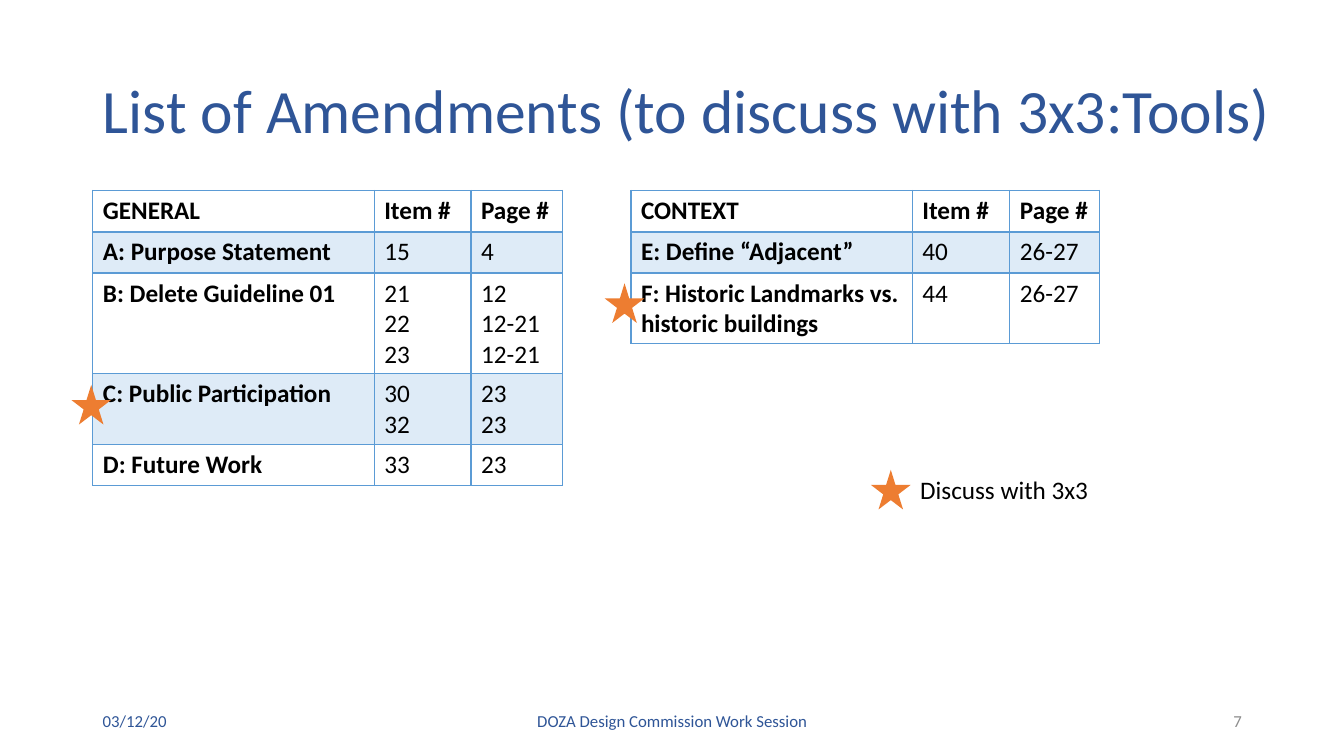
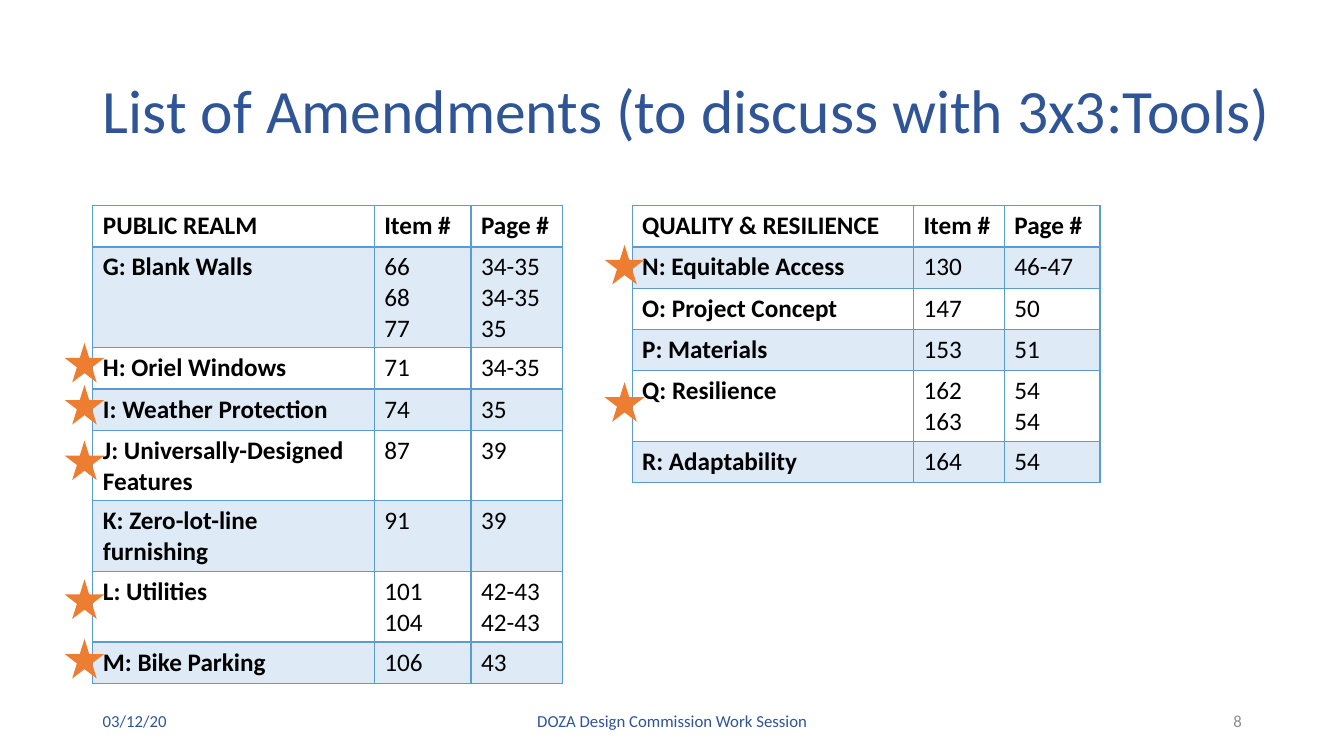
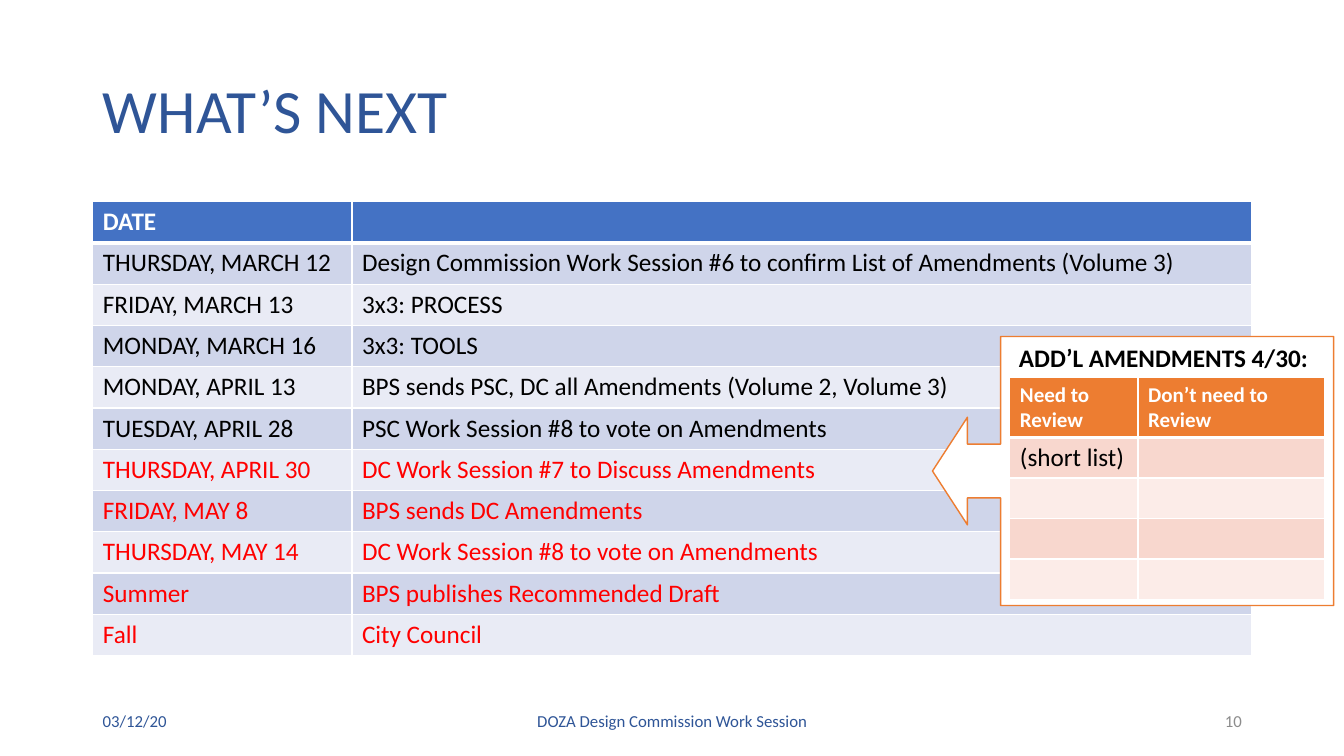
from pptx import Presentation
from pptx.dml.color import RGBColor
from pptx.enum.shapes import MSO_SHAPE
from pptx.enum.text import MSO_ANCHOR, MSO_AUTO_SIZE, PP_ALIGN
from pptx.oxml import parse_xml
from pptx.oxml.ns import nsdecls
from pptx.util import Cm, Pt

LEFT, MID, RIGHT = PP_ALIGN.LEFT, PP_ALIGN.CENTER, PP_ALIGN.RIGHT
STAR, CALL = MSO_SHAPE.STAR_5_POINT, MSO_SHAPE.LEFT_ARROW_CALLOUT
CENTER, FIXED = MSO_ANCHOR.MIDDLE, MSO_AUTO_SIZE.NONE
rgb = RGBColor.from_string

NAVY, GREY, BLACK, WHITE = "2F5597", "8C8C8C", "000000", "FFFFFF"
ORANGE, RED = "ED7D31", "FF0000"
EDGE = 2.34     # left margin
ROW = 1.04      # table row height

# Table looks: fills, line colour, header rule, first red row
PLAIN = {"head": WHITE, "ink": BLACK, "bands": ("DEEBF7", WHITE),
         "line": "5B9BD5", "rule": 2, "size": 18, "bold": True, "late": 99}
BLUE = {"head": "4472C4", "ink": WHITE, "bands": ("CFD5EA", "E9EBF5"),
        "line": WHITE, "rule": 3, "size": 18, "bold": False, "late": 6}
WARM = {**BLUE, "head": ORANGE, "bands": ("F8D7CE", "FCECE8"),
        "size": 15, "late": 99}


def write(frame, text, hue=BLACK, align=LEFT, **props):
    """Fill a text frame; each line of text becomes a paragraph."""
    frame.word_wrap = True
    frame.text = text
    for para in frame.paragraphs:
        para.alignment = align
        for run in para.runs:
            run.font.color.rgb = rgb(hue)
            for key, val in {"name": "Calibri", "size": Pt(18),
                             "bold": False, **props}.items():
                setattr(run.font, key, val)


def grid(slide, x, y, cols, rows, look, high=ROW, top=ROW):
    """Add a table with a ruled header and banded rows."""
    table = slide.shapes.add_table(
        len(rows), len(cols), Cm(x), Cm(y), Cm(sum(cols)),
        Cm(top + high * (len(rows) - 1))).table
    table.first_row = table.horz_banding = False
    for col, wide in zip(table.columns, cols):
        col.width = Cm(wide)
    for r, row in enumerate(rows):
        table.rows[r].height = Cm(high if r else top)
        for c, text in enumerate(row):
            cell = table.cell(r, c)
            for side in "LRTB":
                thick = (r, side) in ((0, "B"), (1, "T"))
                wide = Pt(look["rule"] if thick else 1)
                cell._tc.get_or_add_tcPr().append(parse_xml(
                    f'<a:ln{side} {nsdecls("a")} w="{wide}"><a:solidFill>'
                    f'<a:srgbClr val="{look["line"]}"/></a:solidFill>'
                    f'</a:ln{side}>'))
            cell.fill.solid()
            fill = look["bands"][(r - 1) % 2] if r else look["head"]
            cell.fill.fore_color.rgb = rgb(fill)
            hue = RED if r >= look["late"] else BLACK if r else look["ink"]
            write(cell.text_frame, text, hue,
                  size=Pt(18 if r else look["size"]),
                  bold=r == 0 or (look["bold"] and c == 0))


deck = Presentation()
deck.slide_width, deck.slide_height = Cm(33.87), Cm(19.05)

# Shared title place
base = deck.slide_layouts[5]
head = base.placeholders[0]
for key, val in {"left": EDGE, "top": 1.02, "width": 30.38,
                 "height": 3.68}.items():
    setattr(head, key, Cm(val))

# Shared title style and footer
LIST = "List of Amendments (to discuss with 3x3:Tools)"
slides = []
for title, page in ((LIST, "7"), (LIST, "8"), ("WHAT’S NEXT", "10")):
    slide = deck.slides.add_slide(base)
    slides.append(slide)
    frame = slide.shapes.title.text_frame
    write(frame, title, NAVY, size=Pt(44))
    frame.auto_size, frame.vertical_anchor = FIXED, CENTER
    frame.paragraphs[0].line_spacing = 0.9
    for x, wide, text, hue, align in (
            (EDGE, 7.62, "03/12/20", NAVY, LEFT),
            (11.23, 11.43, "DOZA Design Commission Work Session", NAVY, MID),
            (23.93, 7.62, page, GREY, RIGHT)):
        box = slide.shapes.add_textbox(Cm(x), Cm(17.65), Cm(wide), Cm(1.02))
        write(box.text_frame, text, hue, align, size=Pt(12))
        box.text_frame.vertical_anchor = CENTER
first, second, last = slides

# Amendment tables
COLS = (7.09, 2.44, 2.31)
NUMS = ("Item #", "Page #")
grid(first, EDGE, 4.8, COLS, (
    ("GENERAL", *NUMS),
    ("A: Purpose Statement", "15", "4"),
    ("B: Delete Guideline 01", "21\n22\n23", "12\n12-21\n12-21"),
    ("C: Public Participation", "30\n32", "23\n23"),
    ("D: Future Work", "33", "23")), PLAIN)
grid(first, 15.9, 4.8, (7.09, 2.46, 2.26), (
    ("CONTEXT", *NUMS),
    ("E: Define “Adjacent”", "40", "26-27"),
    ("F: Historic Landmarks vs. historic buildings", "44", "26-27")), PLAIN)
grid(second, EDGE, 5.18, COLS, (
    ("PUBLIC REALM", *NUMS),
    ("G: Blank Walls", "66\n68\n77", "34-35\n34-35\n35"),
    ("H: Oriel Windows", "71", "34-35"),
    ("I: Weather Protection", "74", "35"),
    ("J: Universally-Designed Features", "87", "39"),
    ("K: Zero-lot-line furnishing", "91", "39"),
    ("L: Utilities", "101\n104", "42-43\n42-43"),
    ("M: Bike Parking", "106", "43")), PLAIN)
grid(second, 15.93, 5.18, (7.09, 2.29, 2.41), (
    ("QUALITY & RESILIENCE", *NUMS),
    ("N: Equitable Access", "130", "46-47"),
    ("O: Project Concept", "147", "50"),
    ("P: Materials", "153", "51"),
    ("Q: Resilience", "162\n163", "54\n54"),
    ("R: Adaptability", "164", "54")), PLAIN)

# Stars beside the rows to discuss, and their legend
for slide, x, tops in ((first, 1.8, (9.7,)), (first, 15.24, (7.14,)),
                       (first, 21.95, (11.84,)),
                       (second, 1.63, (8.64, 9.7, 11.1, 14.6, 16.1)),
                       (second, 15.24, (6.17, 9.63))):
    for y in tops:
        star = slide.shapes.add_shape(STAR, Cm(x), Cm(y), Cm(1), Cm(1))
        star.shadow.inherit = False
        star.fill.solid()
        star.fill.fore_color.rgb = rgb(ORANGE)
        star.line.fill.background()
key = first.shapes.add_textbox(Cm(22.94), Cm(11.84), Cm(8.18), Cm(1.03))
write(key.text_frame, "Discuss with 3x3")

# Schedule
grid(last, EDGE, 5.08, (6.53, 22.68), (
    ("DATE", ""),
    ("THURSDAY, MARCH 12", "Design Commission Work Session #6 to confirm "
                           "List of Amendments (Volume 3)"),
    ("FRIDAY, MARCH 13", "3x3: PROCESS"),
    ("MONDAY, MARCH 16", "3x3: TOOLS"),
    ("MONDAY, APRIL 13",
     "BPS sends PSC, DC all Amendments (Volume 2, Volume 3)"),
    ("TUESDAY, APRIL 28", "PSC Work Session #8 to vote on Amendments"),
    ("THURSDAY, APRIL 30", "DC Work Session #7 to Discuss Amendments"),
    ("FRIDAY, MAY 8", "BPS sends DC Amendments"),
    ("THURSDAY, MAY 14", "DC Work Session #8 to vote on Amendments"),
    ("Summer", "BPS publishes Recommended Draft"),
    ("Fall", "City Council")), BLUE)

# Callout with its small table
call = last.shapes.add_shape(CALL, Cm(23.5), Cm(8.48), Cm(10.11), Cm(6.78))
call.shadow.inherit = False
for i, val in enumerate((0.2, 0.2, 0.13, 0.83)):
    call.adjustments[i] = val
call.fill.solid()
call.fill.fore_color.rgb = rgb(WHITE)
call.line.color.rgb = rgb(ORANGE)
call.line.width = Pt(1)
note = last.shapes.add_textbox(Cm(25.43), Cm(8.51), Cm(8.89), Cm(1.03))
write(note.text_frame, "ADD’L AMENDMENTS 4/30:", bold=True)
grid(last, 25.45, 9.5, (3.23, 4.7), (
    ("Need to Review", "Don’t need to Review"),
    ("(short list)", ""), *[("", "")] * 3), WARM, high=1.02, top=1.5)

deck.save("out.pptx")
